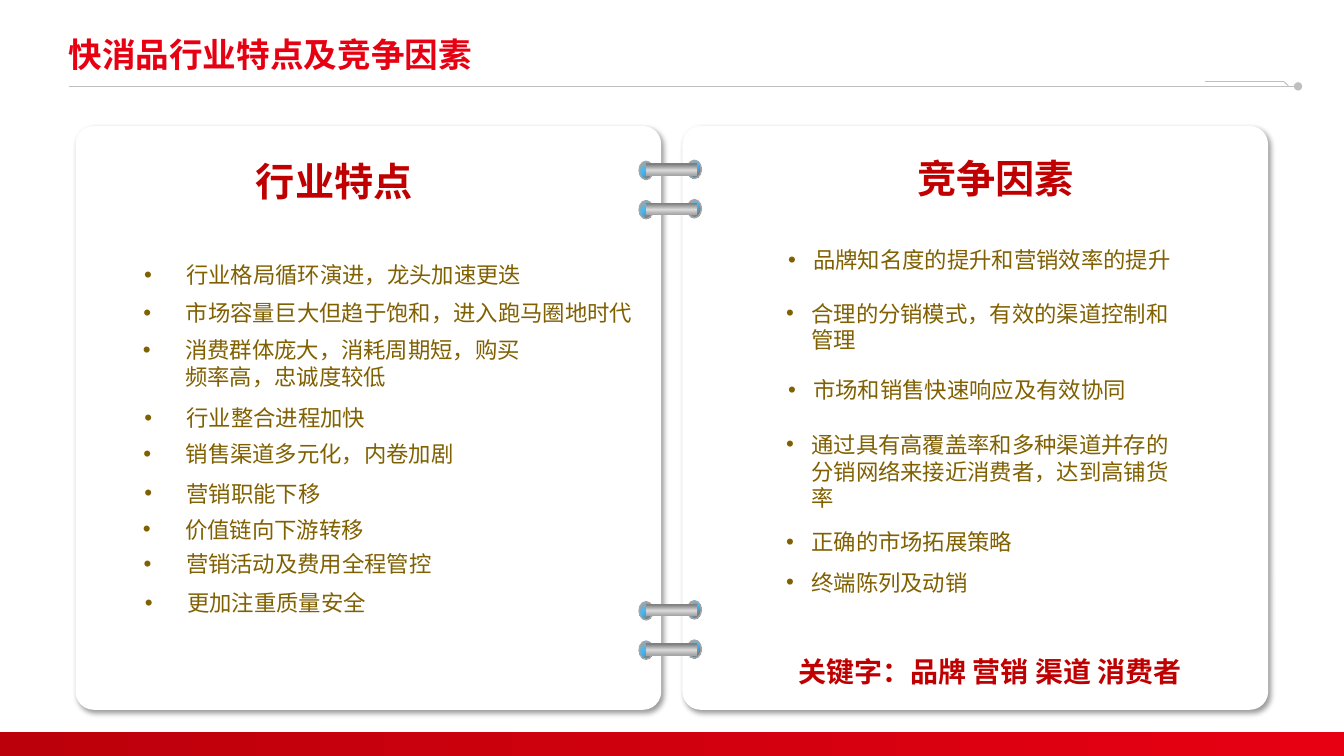
from dataclasses import dataclass
from pptx import Presentation
from pptx.dml.color import RGBColor as RGB
from pptx.enum.shapes import MSO_CONNECTOR as Link, MSO_SHAPE as Kind
from pptx.enum.text import MSO_ANCHOR as Anchor, PP_ALIGN as Align
from pptx.oxml import parse_xml
from pptx.oxml.ns import nsdecls
from pptx.util import Pt
from lxml.etree import SubElement
from pptx.oxml.ns import qn


@dataclass(frozen=True)
class Theme:
    font: str = "Noto Sans CJK SC"
    red: str = "E60012"
    deep: str = "BC000B"
    head: str = "C00000"
    body: str = "806000"
    rule: str = "BFBFBF"
    page: str = "FFFFFF"
    edge: str = "A6A6A6"
    dark: str = "808080"
    glow: str = "3CBBFF"
    pale: str = "D9D9D9"
    title: int = 24
    name: int = 28
    key: int = 20
    item: int = 16


theme = Theme()
deck = Presentation()
deck.slide_width, deck.slide_height = Pt(960), Pt(540)
slide = deck.slides.add_slide(deck.slide_layouts[6])
shapes = slide.shapes


def write(box, text, size, color, bold=False, align=Align.LEFT,
          anchor=Anchor.TOP, pads=(7.2, 3.6, 7.2, 3.6), hang=0):
    shape = shapes.add_textbox(*map(Pt, box))
    frame = shape.text_frame
    frame.word_wrap = True
    frame.vertical_anchor = anchor
    (frame.margin_left, frame.margin_top,
     frame.margin_right, frame.margin_bottom) = map(Pt, pads)
    frame.text = text
    para = frame.paragraphs[0]
    para.alignment = align
    if hang:
        props = para._p.get_or_add_pPr()
        props.set("marL", str(Pt(hang)))
        props.set("indent", str(-Pt(hang)))
        SubElement(props, qn("a:buFont"), typeface="Arial")
        SubElement(props, qn("a:buChar"), char="•")
    font = para.runs[0].font
    font.size, font.bold, font.name = Pt(size), bold, theme.font
    font.color.rgb = RGB.from_string(color)
    SubElement(para.runs[0]._r.get_or_add_rPr(), qn("a:ea"), typeface=theme.font)
    return para


def blend(kind, box, stops, way):
    shape = shapes.add_shape(kind, *map(Pt, box))
    shape.shadow.inherit = False
    shape.line.fill.background()
    marks = "".join(f'<a:gs pos="{spot * 1000}"><a:srgbClr val="{color}"/></a:gs>'
                    for spot, color in stops)
    shape._element.spPr.insert(2, parse_xml(
        f'<a:gradFill {nsdecls("a")} rotWithShape="1">'
        f'<a:gsLst>{marks}</a:gsLst>{way}</a:gradFill>'))
    return shape


# Header rule with its small step, and the bottom band
for x1, y1, x2, y2, tip in [(49, 61.7, 927.2, 61.7, True),
                            (861, 58.5, 917.3, 58.5, False),
                            (917.3, 58.5, 920.2, 61.2, False)]:
    rule = shapes.add_connector(Link.STRAIGHT, Pt(x1), Pt(y1), Pt(x2), Pt(y2))
    rule.line.color.rgb = RGB.from_string(theme.rule)
    rule.line.width = Pt(0.75)
    if tip:
        SubElement(rule.line._get_or_add_ln(), qn("a:tailEnd"), type="oval")
    SubElement(rule._element.spPr, qn("a:effectLst"))
blend(Kind.RECTANGLE, (0, 522.7, 960, 17.3),
      [(0, theme.deep), (100, theme.red)], '<a:lin ang="0" scaled="0"/>')

# Title
title = write((49, 22.3, 725.8, 36), "快消品行业特点及竞争因素", theme.title,
              theme.red, True, anchor=Anchor.MIDDLE, pads=(0, 3.6, 7.2, 3.6))
title.line_spacing = 0.9

# Notebook pages
for left in (54, 487.5):
    page = shapes.add_shape(Kind.ROUNDED_RECTANGLE,
                            Pt(left), Pt(90), Pt(418.3), Pt(417))
    page.adjustments[0] = 0.031
    page.fill.solid()
    page.fill.fore_color.rgb = RGB.from_string(theme.page)
    page.line.fill.background()
    page._element.spPr.append(parse_xml(
        f'<a:effectLst {nsdecls("a")}><a:outerShdw blurRad="{Pt(4)}" dist="{Pt(3)}" '
        'dir="2700000" algn="tl" rotWithShape="0"><a:srgbClr val="000000">'
        '<a:alpha val="40000"/></a:srgbClr></a:outerShdw></a:effectLst>'))

# Binder rings
for top in (114.5, 142.6, 429.1, 457.2):
    for left, drop in ((491, 0), (456.5, 0.7)):
        hole = blend(Kind.OVAL, (left, top + drop, 10, 13),
                     [(20, theme.dark), (51, theme.glow), (86, theme.edge)],
                     '<a:path path="circle"><a:fillToRect l="100000" t="100000"/></a:path>')
        hole.line.color.rgb = RGB.from_string(theme.edge)
        hole.line.width = Pt(1)
    blend(Kind.RECTANGLE, (461.5, top + 2.2, 36.7, 8.6),
          [(9, theme.dark), (57, theme.pale), (98, theme.edge)],
          '<a:lin ang="5400000" scaled="0"/>')

# Page headings and keywords
for box, text, size in [
        ((175, 108.7, 127.4, 41), "行业特点", theme.name),
        ((647.3, 106.6, 127.4, 41), "竞争因素", theme.name),
        ((501, 463.7, 412.6, 31.7), "关键字：品牌 营销 渠道 消费者", theme.key)]:
    write(box, text, size, theme.head, True, Align.CENTER)

# Left page: industry traits
for left, top, wide, text in [
        (95.8, 182.9, 368, "行业格局循环演进，龙头加速更迭"),
        (95.4, 210.2, 368, "市场容量巨大但趋于饱和，进入跑马圈地时代"),
        (95, 236.9, 293, "消费群体庞大，消耗周期短，购买频率高，忠诚度较低"),
        (96, 285.1, 368, "行业整合进程加快"),
        (95.4, 311, 368, "销售渠道多元化，内卷加剧"),
        (96, 339.1, 368, "营销职能下移"),
        (95, 365, 368, "价值链向下游转移"),
        (95.6, 389.5, 368, "营销活动及费用全程管控"),
        (96.5, 417.6, 368, "更加注重质量安全")]:
    write((left, top, wide, 26.6), text, theme.item, theme.body, hang=30.2)

# Right page: competitive factors
for left, top, rows, text in [
        (563, 175.7, 1, "品牌知名度的提升和营销效率的提升"),
        (561.6, 213.8, 2, "合理的分销模式，有效的渠道控制和管理"),
        (563, 268.6, 1, "市场和销售快速响应及有效协同"),
        (561.6, 307.4, 3, "通过具有高覆盖率和多种渠道并存的分销网络来接近消费者，达到高铺货率"),
        (561.6, 377.3, 1, "正确的市场拓展策略"),
        (561.6, 406.1, 1, "终端陈列及动销")]:
    write((left, top, 277, 19.4 * rows), text, theme.item, theme.body,
          anchor=Anchor.MIDDLE, pads=(0, 0, 0, 0), hang=18)

deck.save("out.pptx")
